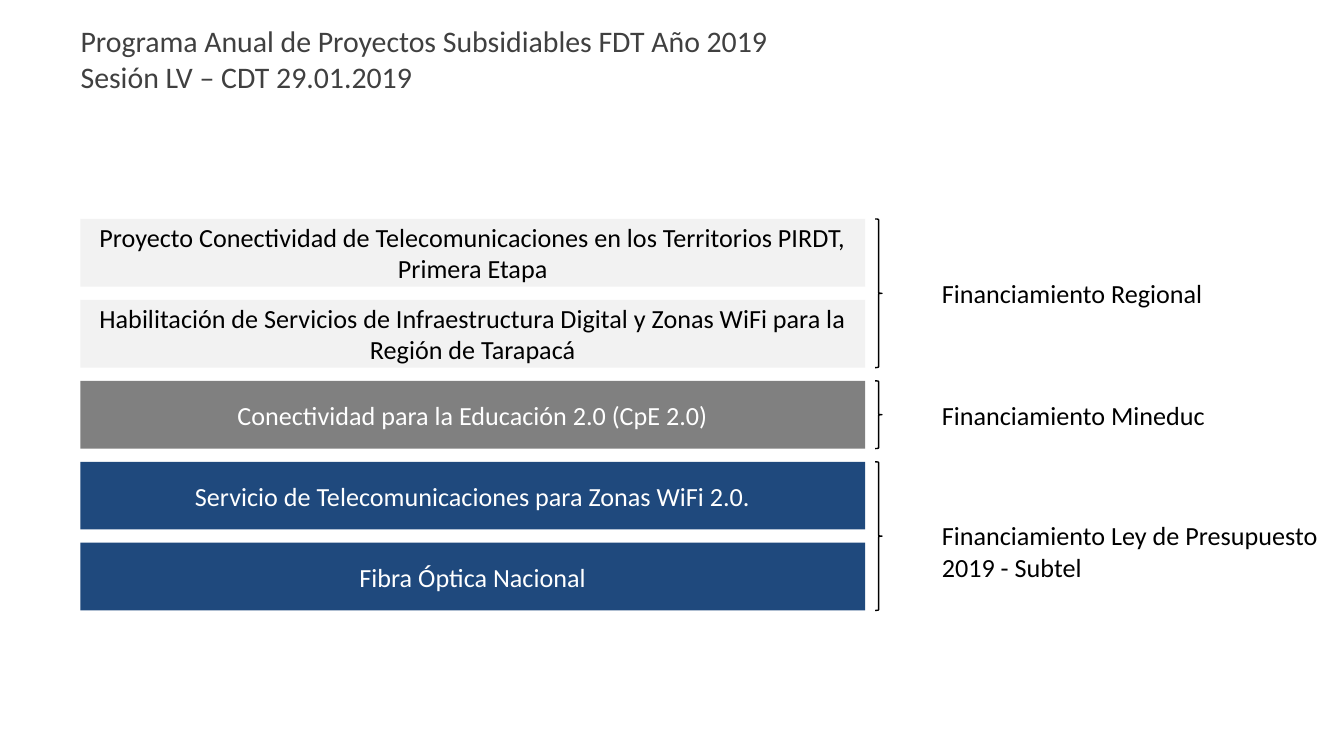
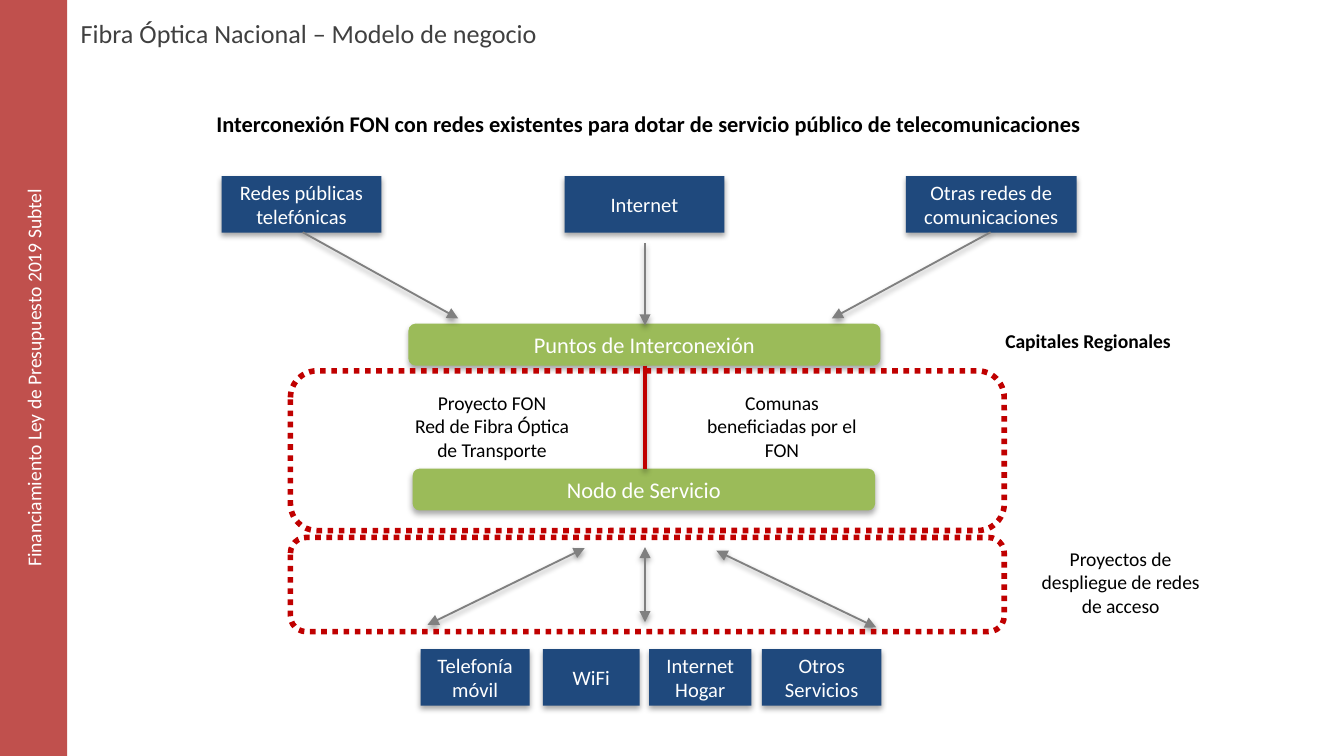
from dataclasses import dataclass
from typing import Optional

from lxml import etree
from pptx import Presentation
from pptx import util as u
from pptx.dml.color import RGBColor
from pptx.enum import dml, shapes, text
from pptx.oxml import ns

# Shared look
FONT = "Calibri"
WHITE = RGBColor(0xFF, 0xFF, 0xFF)
BLACK = RGBColor(0, 0, 0)
TITLE_GREY = RGBColor(0x40, 0x40, 0x40)
LIGHT_GREY = RGBColor(0xF2, 0xF2, 0xF2)
GREY = RGBColor(0x80, 0x80, 0x80)
BLUE = RGBColor(0x1F, 0x49, 0x7D)
GREEN = RGBColor(0x9B, 0xBB, 0x59)
RED = RGBColor(0xC0, 0, 0)
SIDEBAR_RED = RGBColor(0xC0, 0x50, 0x4D)

SLIDE_WIDTH, SLIDE_HEIGHT = 25.4, 14.29
TITLE_ONLY = 5
RECT = shapes.MSO_SHAPE.RECTANGLE
ROUNDED = shapes.MSO_SHAPE.ROUNDED_RECTANGLE
LEFT, CENTER = text.PP_ALIGN.LEFT, text.PP_ALIGN.CENTER
JUSTIFY = text.PP_ALIGN.JUSTIFY
TOP, MIDDLE = text.MSO_ANCHOR.TOP, text.MSO_ANCHOR.MIDDLE


@dataclass(frozen=True)
class Place:
    """A frame in centimetres."""
    left: float
    top: float
    width: float
    height: float

    def lengths(self) -> tuple:
        return tuple(map(u.Cm, (self.left, self.top, self.width, self.height)))


@dataclass(frozen=True)
class Style:
    size: float
    color: RGBColor
    align: text.PP_ALIGN = CENTER
    anchor: text.MSO_ANCHOR = MIDDLE
    bold: bool = False
    wrap: bool = True


@dataclass(frozen=True)
class Project:
    name: str
    fill: RGBColor
    color: RGBColor


@dataclass(frozen=True)
class Funding:
    label: str
    first_row: int
    rows: int
    width: float
    drop: float = 0


@dataclass(frozen=True)
class Column:
    label: str
    left: float
    width: float


@dataclass(frozen=True)
class Link:
    start: tuple
    end: tuple
    both_ways: bool = False


@dataclass(frozen=True)
class Note:
    label: str
    place: Place
    style: Style


# Drawing functions
def write(shape, label: str, style: Style) -> None:
    frame = shape.text_frame
    frame.text = label
    frame.auto_size = text.MSO_AUTO_SIZE.NONE
    frame.word_wrap = style.wrap
    frame.vertical_anchor = style.anchor
    for paragraph in frame.paragraphs:
        paragraph.alignment = style.align
        font = paragraph.font
        font.name, font.size, font.bold = FONT, u.Pt(style.size), style.bold
        font.color.rgb = style.color


def add_effects(shape, distance: Optional[float], opacity: int = 35) -> None:
    """Give a soft shadow below, or none when there is no distance."""
    properties = shape._element.spPr
    effects = etree.SubElement(properties, ns.qn("a:effectLst"))
    if distance is not None:
        shadow = etree.SubElement(
            effects, ns.qn("a:outerShdw"), blurRad=str(u.Pt(3.1)),
            dist=str(u.Pt(distance)), dir="5400000", rotWithShape="0")
        color = etree.SubElement(shadow, ns.qn("a:srgbClr"), val="000000")
        etree.SubElement(color, ns.qn("a:alpha"), val=str(opacity * 1000))


def add_box(slide, kind, place: Place, fill: Optional[RGBColor],
            label: str = "", style: Optional[Style] = None,
            shadowed: bool = False):
    shape = slide.shapes.add_shape(kind, *place.lengths())
    if fill is None:
        shape.fill.background()
    else:
        shape.fill.solid()
        shape.fill.fore_color.rgb = fill
    shape.line.fill.background()
    if shadowed:
        add_effects(shape, 1.8)
    else:
        shape.shadow.inherit = False
    if style is not None:
        write(shape, label, style)
    return shape


def add_text(slide, note: Note) -> None:
    write(slide.shapes.add_textbox(*note.place.lengths()), note.label, note.style)


def add_link(slide, link: Link, color: RGBColor, width: float,
             arrow: bool = True) -> None:
    connector = slide.shapes.add_connector(
        shapes.MSO_CONNECTOR.STRAIGHT, *map(u.Cm, link.start + link.end))
    connector.line.color.rgb = color
    connector.line.width = u.Pt(width)
    outline = connector.line._get_or_add_ln()
    if arrow and link.both_ways:
        etree.SubElement(outline, ns.qn("a:headEnd"), type="triangle")
    if arrow:
        etree.SubElement(outline, ns.qn("a:tailEnd"), type="triangle")
    add_effects(connector, 1.6, 38)


def add_titled_slide(presentation, title: str, top: float, size: float):
    slide = presentation.slides.add_slide(presentation.slide_layouts[TITLE_ONLY])
    shape = slide.shapes.title
    shape.left, shape.top, shape.width, shape.height = Place(
        1.27, top, 22.6, 1.04).lengths()
    write(shape, title, Style(size, TITLE_GREY, JUSTIFY, TOP))
    return slide


# Slide 1: projects by source of funding
PROJECTS = [
    Project("Proyecto Conectividad de Telecomunicaciones en los Territorios "
            "PIRDT, Primera Etapa", LIGHT_GREY, BLACK),
    Project("Habilitación de Servicios de Infraestructura Digital y Zonas WiFi "
            "para la Región de Tarapacá", LIGHT_GREY, BLACK),
    Project("Conectividad para la Educación 2.0 (CpE 2.0)", GREY, WHITE),
    Project("Servicio de Telecomunicaciones para Zonas WiFi 2.0.", BLUE, WHITE),
    Project("Fibra Óptica Nacional", BLUE, WHITE),
]
FUNDINGS = [
    Funding("Financiamiento Regional", 0, 2, 5.54),
    Funding("Financiamiento Mineduc", 2, 1, 5.56),
    Funding("Financiamiento Ley de Presupuesto\n2019 - Subtel", 3, 2, 7.75, 0.28),
]
ROW_TOP, ROW_PITCH, ROW_HEIGHT = 4.14, 1.53, 1.28


def build_programme(presentation) -> None:
    slide = add_titled_slide(
        presentation,
        "Programa Anual de Proyectos Subsidiables FDT Año 2019\n"
        "Sesión LV – CDT 29.01.2019", 0.3, 16)

    for row, project in enumerate(PROJECTS):
        place = Place(1.52, ROW_TOP + row * ROW_PITCH, 14.83, ROW_HEIGHT)
        add_box(slide, RECT, place, project.fill, project.name,
                Style(14, project.color))

    for funding in FUNDINGS:
        top = ROW_TOP + funding.first_row * ROW_PITCH
        height = (funding.rows - 1) * ROW_PITCH + ROW_HEIGHT
        brace = add_box(slide, shapes.MSO_SHAPE.RIGHT_BRACE,
                        Place(16.54, top, 0.13, height), None)
        brace.line.color.rgb = BLACK
        brace.line.width = u.Pt(0.75)
        add_text(slide, Note(
            funding.label,
            Place(17.55, top + funding.drop, funding.width, height),
            Style(14, BLACK, LEFT, wrap=False)))


# Slide 2: business model of the national fibre network
AXIS = 12.19
BOX_HEIGHT, HUB_HEIGHT = 1.07, 0.79
NETWORKS_TOP, SERVICES_TOP = 3.33, 12.27
NETWORKS = [
    Column("Redes públicas telefónicas", 4.19, 3.02),
    Column("Internet", 10.67, 3.02),
    Column("Otras redes de comunicaciones", 17.12, 3.23),
]
SERVICES = [
    Column("Telefonía móvil", 7.95, 2.06),
    Column("WiFi", 10.26, 1.83),
    Column("Internet Hogar", 12.27, 1.93),
    Column("Otros Servicios", 14.4, 2.26),
]
HUBS = [
    ("Puntos de Interconexión", Place(7.72, 6.12, 8.92, HUB_HEIGHT)),
    ("Nodo de Servicio", Place(7.8, 8.86, 8.74, HUB_HEIGHT)),
]
ZONES = [Place(5.49, 7.01, 13.49, 3.02), Place(5.49, 10.16, 13.49, 1.78)]
LINKS = [
    Link((5.72, 4.39), (8.66, 6.02)),
    Link((AXIS, 4.6), (AXIS, 6.15)),
    Link((18.72, 4.39), (15.72, 6.02)),
    Link((8.08, 11.81), (11.05, 10.36), True),
    Link((AXIS, 11.76), (AXIS, 10.34), True),
    Link((16.56, 11.86), (13.54, 10.41), True),
]
CAPTION = Style(10.5, BLACK, CENTER, TOP)
NOTES = [
    Note("Interconexión FON con redes existentes para dotar de servicio público "
         "de telecomunicaciones", Place(1.8, 1.96, 20.93, 1.27),
         Style(12, BLACK, CENTER, TOP, bold=True)),
    Note("Capitales Regionales", Place(18.75, 6.1, 4.85, 0.69),
         Style(10.5, BLACK, LEFT, TOP, bold=True, wrap=False)),
    Note("Proyecto FON\nRed de Fibra Óptica de Transporte",
         Place(7.47, 7.26, 3.66, 2.03), CAPTION),
    Note("Comunas beneficiadas por el FON",
         Place(12.95, 7.26, 3.66, 1.57), CAPTION),
    Note("Proyectos de despliegue de redes de acceso",
         Place(19.35, 10.21, 3.66, 1.57), CAPTION),
]


def build_business_model(presentation) -> None:
    slide = add_titled_slide(
        presentation, "Fibra Óptica Nacional – Modelo de negocio", 0.2, 14)

    # Networks above, services below
    for top, columns in ((NETWORKS_TOP, NETWORKS), (SERVICES_TOP, SERVICES)):
        for column in columns:
            add_box(slide, RECT, Place(column.left, top, column.width, BOX_HEIGHT),
                    BLUE, column.label, Style(11, WHITE), shadowed=True)

    # Hubs and links
    for label, place in HUBS:
        add_box(slide, ROUNDED, place, GREEN, label, Style(12, WHITE),
                shadowed=True)
    for link in LINKS:
        add_link(slide, link, GREY, 1)
    add_link(slide, Link((AXIS, 6.91), (AXIS, 8.86)), RED, 2, arrow=False)

    # Dotted zones
    for place in ZONES:
        zone = add_box(slide, ROUNDED, place, None)
        zone.line.color.rgb = RED
        zone.line.width = u.Pt(3)
        zone.line.dash_style = dml.MSO_LINE.ROUND_DOT

    for note in NOTES:
        add_text(slide, note)

    # Sidebar with upward text
    sidebar = add_box(slide, RECT, Place(0, 0, 1.27, SLIDE_HEIGHT), SIDEBAR_RED,
                      "Financiamiento Ley de Presupuesto 2019 Subtel",
                      Style(10.5, WHITE))
    sidebar.text_frame._txBody.bodyPr.set("vert", "vert270")


def main() -> None:
    presentation = Presentation()
    presentation.slide_width = u.Cm(SLIDE_WIDTH)
    presentation.slide_height = u.Cm(SLIDE_HEIGHT)
    build_programme(presentation)
    build_business_model(presentation)
    presentation.save("out.pptx")


if __name__ == "__main__":
    main()
